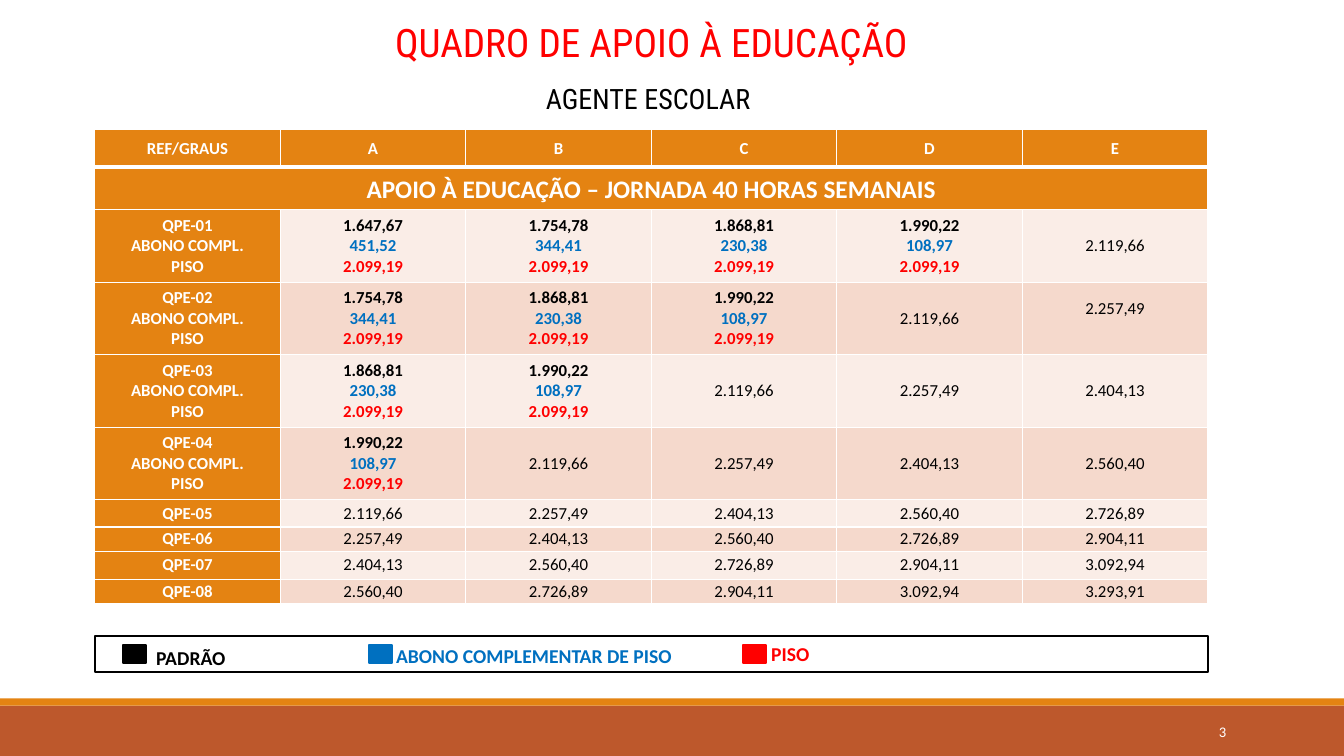
from lxml import etree
from pptx import Presentation
from pptx import util as u
from pptx.dml import color
from pptx.enum import shapes, text
from pptx.oxml import ns

# Content
TITLE, SUBTITLE, PAGE = "QUADRO DE APOIO À EDUCAÇÃO", "AGENTE ESCOLAR ", "3"
HEADER = ["REF/GRAUS", "A", "B", "C", "D", "E"]
BAND = "APOIO À EDUCAÇÃO – JORNADA 40 HORAS SEMANAIS"
REFS = ["QPE-01", "QPE-02", "QPE-03", "QPE-04", "QPE-05", "QPE-06", "QPE-07", "QPE-08"]
REF_NOTES = ["ABONO COMPL.", "PISO"]
# Each reference starts one step further up this pay ladder
LADDER = ["1.647,67", "1.754,78", "1.868,81", "1.990,22", "2.119,66", "2.257,49",
          "2.404,13", "2.560,40", "2.726,89", "2.904,11", "3.092,94", "3.293,91"]
FLOOR = "2.099,19"
BONUS = {"1.647,67": "451,52", "1.754,78": "344,41", "1.868,81": "230,38", "1.990,22": "108,97"}
ROW_HEIGHTS = [0.38, 0.42, 0.72, 0.72, 0.72, 0.72, 0.27, 0.24, 0.28, 0.24]
# Label, colour, marker left, label left, label top, label width
LEGEND = [("PADRÃO", "black", 1.22, 1.45, 6.36, 1.19),
          ("ABONO COMPLEMENTAR DE PISO", "blue", 3.66, 3.83, 6.34, 3.36),
          ("PISO", "red", 7.37, 7.55, 6.32, 1.0)]

THEME = {
    "white": "FFFFFF", "black": "000000", "red": "FF0000", "blue": "0070C0",
    "orange": "E48312", "rust": "BD582C", "stripes": ["FAEDE7", "F5D9CC"],
    "body": "Calibri", "heading": "Roboto Condensed",
    "title": 28, "subtitle": 20, "band": 18, "legend": 14, "cell": 12, "page": 10.5,
}
LEFT, WIDTH, TABLE_TOP = 0.94, 11.04, 1.28
CENTER, MIDDLE = text.PP_ALIGN.CENTER, text.MSO_ANCHOR.MIDDLE


def rgb(name):
    return color.RGBColor.from_string(THEME.get(name, name))


def write(tf, lines, size, bold=True, font="body", align=CENTER, **para):
    """Write (text, colour) lines, one paragraph each."""
    for i, (words, hue) in enumerate(lines):
        p = tf.paragraphs[0] if i == 0 else tf.add_paragraph()
        for key, value in {"alignment": align, **para}.items():
            setattr(p, key, value)
        r = p.add_run()
        r.text = words
        for key, value in {"size": u.Pt(THEME[size]), "bold": bold, "name": THEME[font]}.items():
            setattr(r.font, key, value)
        r.font.color.rgb = rgb(hue)


def add_box(x, y, w, h, fill, line=None):
    sp = slide.shapes.add_shape(shapes.MSO_SHAPE.RECTANGLE, *map(u.Inches, (x, y, w, h)))
    sp.shadow.inherit = False
    sp.fill.solid()
    sp.fill.fore_color.rgb = rgb(fill)
    if line:
        sp.line.color.rgb = rgb(line)
        sp.line.width = u.Pt(1.25)
    else:
        sp.line.fill.background()


def add_text(x, y, w, h, anchor=text.MSO_ANCHOR.TOP):
    tf = slide.shapes.add_textbox(*map(u.Inches, (x, y, w, h))).text_frame
    tf.word_wrap = True
    tf.vertical_anchor = anchor
    return tf


def style_cell(cell, fill, bottom=1):
    margins = {"margin_left": 0.07, "margin_right": 0.07, "margin_top": 0, "margin_bottom": 0}
    for key, value in margins.items():
        setattr(cell, key, u.Inches(value))
    cell.vertical_anchor = MIDDLE
    tc_pr = cell._tc.get_or_add_tcPr()
    for side, width in {"lnL": 1, "lnR": 1, "lnT": 1, "lnB": bottom}.items():
        ln = etree.SubElement(tc_pr, ns.qn("a:" + side), w=str(u.Pt(width)))
        solid = etree.SubElement(ln, ns.qn("a:solidFill"))
        etree.SubElement(solid, ns.qn("a:srgbClr"), val=THEME["white"])
    cell.fill.solid()
    cell.fill.fore_color.rgb = rgb(fill)


prs = Presentation()
prs.slide_width, prs.slide_height = u.Inches(13.33), u.Inches(7.5)
slide = prs.slides.add_slide(prs.slide_layouts[6])

# Footer
add_box(0, 7, 13.33, 0.5, "rust")
add_box(0, 6.93, 13.33, 0.07, "orange")
write(add_text(10.83, 7.06, 1.43, 0.4, MIDDLE), [(PAGE, "white")], "page",
      bold=False, align=text.PP_ALIGN.RIGHT)

# Headings
tf = add_text(LEFT, 0.13, WIDTH, 1.08)
write(tf, [(TITLE, "red")], "title", bold=False, font="heading")
p = tf.add_paragraph()
p.alignment, p.space_before = CENTER, u.Pt(12)
r = p.add_run()
r.text = SUBTITLE
r.font.size, r.font.name = u.Pt(THEME["subtitle"]), THEME["heading"]
r.font.color.rgb = rgb("black")

# Pay table
table = slide.shapes.add_table(len(ROW_HEIGHTS), len(HEADER), u.Inches(LEFT), u.Inches(TABLE_TOP),
                               u.Inches(WIDTH), u.Inches(sum(ROW_HEIGHTS))).table
for row, height in zip(table.rows, ROW_HEIGHTS):
    row.height = u.Inches(height)
for c, label in enumerate(HEADER):
    style_cell(table.cell(0, c), "orange", bottom=3)
    write(table.cell(0, c).text_frame, [(label, "white")], "cell", line_spacing=1.07)
    style_cell(table.cell(1, c), "orange")
table.cell(1, 0).merge(table.cell(1, len(HEADER) - 1))
write(table.cell(1, 0).text_frame, [(BAND, "white")], "band", line_spacing=1.07)

for i, ref in enumerate(REFS):
    head = table.cell(i + 2, 0)
    style_cell(head, "orange")
    notes = REF_NOTES if LADDER[i] in BONUS else []
    write(head.text_frame, [(words, "white") for words in [ref] + notes], "cell")
    for j, pay in enumerate(LADDER[i:i + len(HEADER) - 1]):
        cell = table.cell(i + 2, j + 1)
        style_cell(cell, THEME["stripes"][i % 2])
        lines = [(pay, "black")]
        if pay in BONUS:
            lines += [(BONUS[pay], "blue"), (FLOOR, "red")]
        write(cell.text_frame, lines, "cell", bold=pay in BONUS)
# The last grade of QPE-02 sits a little higher
table.cell(3, 5).margin_bottom = u.Inches(0.2)

# Legend
add_box(LEFT, 6.31, WIDTH, 0.36, "white", "black")
for label, hue, marker_x, x, y, w in LEGEND:
    add_box(marker_x, 6.4, 0.23, 0.18, hue, hue)
    write(add_text(x, y, w, 0.34), [(label, hue)], "legend", align=text.PP_ALIGN.LEFT)

prs.save("out.pptx")
